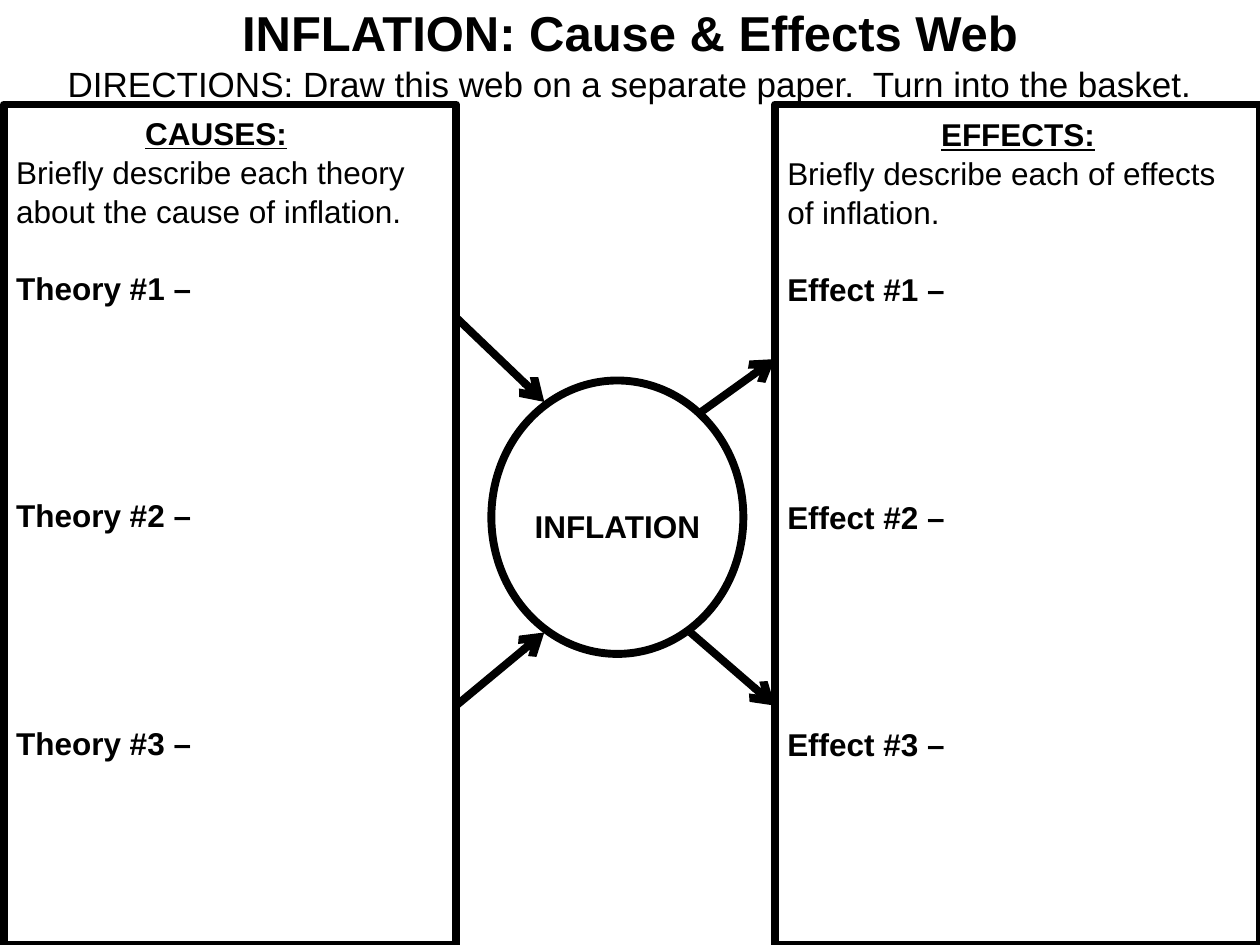
import pptx
import pptx.dml.color
import pptx.enum.shapes
import pptx.enum.text
import pptx.oxml.ns
import pptx.util
from lxml import etree
from pptx.util import Inches

# Content
TITLE = "INFLATION: Cause & Effects Web"
DIRECTIONS = "DIRECTIONS: Draw this web on a separate paper.  Turn into the basket."
CENTRE = "INFLATION"
PANELS = [
    {"heading": "CAUSES:", "item": "Theory",
     "prompt": "Briefly describe each theory about the cause of inflation.",
     "box": (0.03, 0.83, 3.59, 6.67), "text": (0.03, 0.84, 3.37, 5.55)},
    {"heading": "EFFECTS:", "item": "Effect",
     "prompt": "Briefly describe each of effects of inflation.",
     "box": (6.15, 0.83, 3.85, 6.67), "text": (6.15, 0.85, 3.86, 5.55)},
]
CIRCLE = (3.9, 3.02, 2, 2.17)
CENTRE_TEXT = (3.9, 3.96, 2, 0.4)
ARROWS = [  # from x, y, to x, y
    (3.62, 2.52, 4.32, 3.19),
    (3.62, 5.6, 4.32, 5.02),
    (5.48, 5.02, 6.15, 5.6),
    (5.55, 3.28, 6.15, 2.85),
]
INK = "000000"
LINE_WIDTH = 4.5
LINE_SPACING = 1.04
LINE_PITCH = 21.5  # points taken by one line of body text
WRITING_LINES = 5  # lines left free for each answer

SHAPES = pptx.enum.shapes.MSO_SHAPE
CENTER = pptx.enum.text.PP_ALIGN.CENTER
LEFT = pptx.enum.text.PP_ALIGN.LEFT


def color(value):
    return pptx.dml.color.RGBColor.from_string(value)


def style_font(font, size=18, bold=False, underline=False):
    font.name = "Arial"
    font.size = pptx.util.Pt(size)
    font.bold = bold
    font.underline = underline
    font.color.rgb = color(INK)


def style_line(line):
    line.color.rgb = color(INK)
    line.width = pptx.util.Pt(LINE_WIDTH)


def add_outline(slide, kind, place):
    shape = slide.shapes.add_shape(kind, *map(Inches, place))
    shape.shadow.inherit = False
    shape.fill.background()
    style_line(shape.line)


def add_text(slide, place, lines):
    """Each line is text, alignment, blank lines before it, font options."""
    frame = slide.shapes.add_textbox(*map(Inches, place)).text_frame
    frame.word_wrap = True
    for index, (text, alignment, gap, options) in enumerate(lines):
        paragraph = frame.add_paragraph() if index else frame.paragraphs[0]
        paragraph.text = text
        paragraph.alignment = alignment
        paragraph.line_spacing = LINE_SPACING
        paragraph.space_before = pptx.util.Pt(gap * LINE_PITCH)
        style_font(paragraph.font, **options)


def add_arrow(slide, place):
    connector = slide.shapes.add_connector(
        pptx.enum.shapes.MSO_CONNECTOR.STRAIGHT, *map(Inches, place))
    style_line(connector.line)
    qualified = pptx.oxml.ns.qn
    etree.SubElement(connector.line._get_or_add_ln(), qualified("a:tailEnd"), type="arrow")
    etree.SubElement(connector._element.spPr, qualified("a:effectLst"))


def add_title(slide):
    title = slide.shapes.title
    title.left, title.top, title.width, title.height = map(Inches, (0, 0, 10, 0.83))
    frame = title.text_frame
    frame.word_wrap = True
    frame.auto_size = pptx.enum.text.MSO_AUTO_SIZE.NONE
    frame.vertical_anchor = pptx.enum.text.MSO_ANCHOR.MIDDLE
    paragraph = frame.paragraphs[0]
    paragraph.alignment = CENTER
    paragraph.line_spacing = LINE_SPACING
    heading = paragraph.add_run()
    heading.text = TITLE
    style_font(heading.font, 28, bold=True)
    paragraph.add_line_break()
    directions = paragraph.add_run()
    directions.text = DIRECTIONS
    style_font(directions.font, 20)


def main():
    presentation = pptx.Presentation()
    presentation.slide_width, presentation.slide_height = Inches(10), Inches(7.5)
    slide = presentation.slides.add_slide(presentation.slide_layouts[5])
    add_title(slide)

    # Cause and effect panels
    for panel in PANELS:
        add_outline(slide, SHAPES.RECTANGLE, panel["box"])
        lines = [(panel["heading"], CENTER, 0, {"bold": True, "underline": True}),
                 (panel["prompt"], LEFT, 0, {})]
        for number in (1, 2, 3):
            gap = 1 if number == 1 else WRITING_LINES
            lines.append((f"{panel['item']} #{number} –", LEFT, gap, {"bold": True}))
        add_text(slide, panel["text"], lines)

    # Centre of the web
    add_outline(slide, SHAPES.OVAL, CIRCLE)
    add_text(slide, CENTRE_TEXT, [(CENTRE, CENTER, 0, {"bold": True})])
    for arrow in ARROWS:
        add_arrow(slide, arrow)

    presentation.save("out.pptx")


if __name__ == "__main__":
    main()
